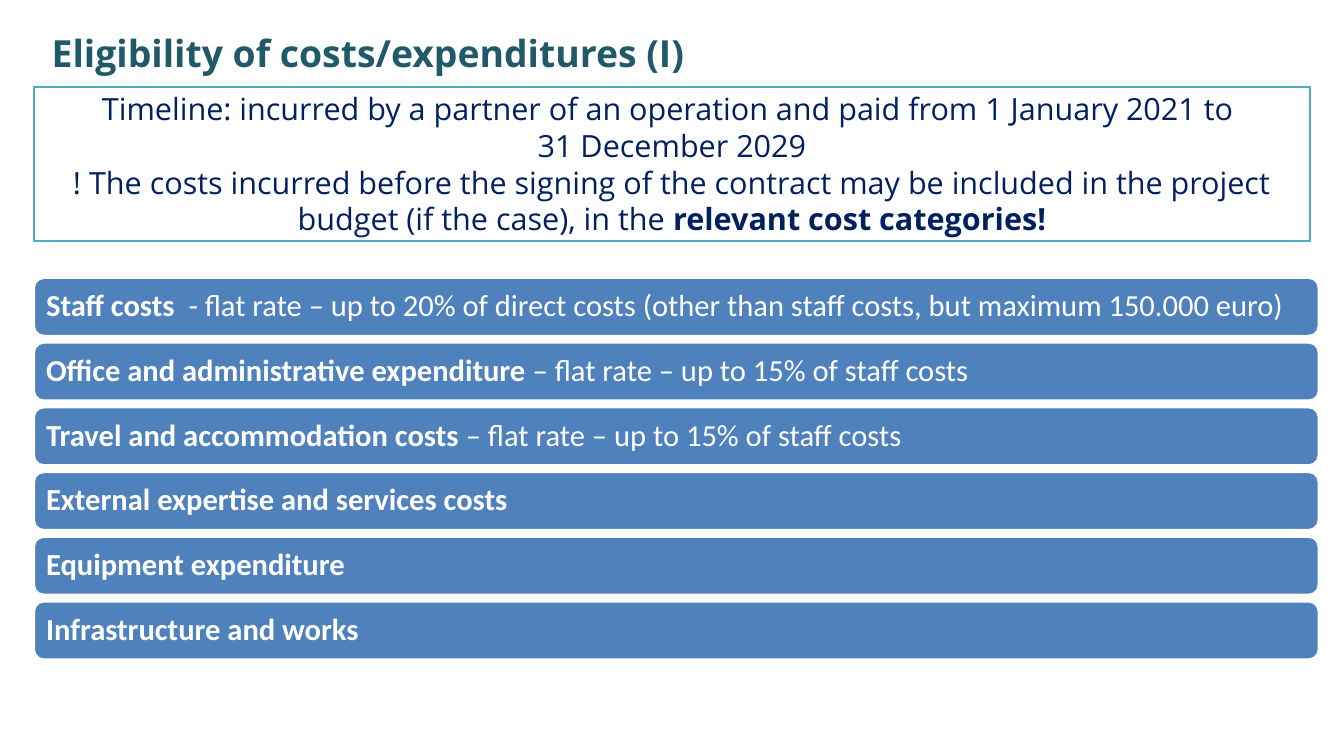
"""Build the slide on the eligibility of costs and expenditures."""
from dataclasses import dataclass
from typing import NamedTuple

from pptx import Presentation
from pptx.dml.color import RGBColor
from pptx.enum.shapes import MSO_SHAPE
from pptx.enum.text import MSO_ANCHOR, MSO_AUTO_SIZE, PP_ALIGN
from pptx.shapes.autoshape import Shape
from pptx.slide import Slide
from pptx.util import Cm, Pt

LEFT = 1.42
BAR_TOP, BAR_STEP, BAR_WIDTH, BAR_HEIGHT = 11.56, 2.69, 53.37, 2.39
TEAL, CYAN, NAVY, BLUE, WHITE = "215968", "4BACC6", "002060", "4F81BD", "FFFFFF"


class Span(NamedTuple):
    text: str
    bold: bool = False
    size: float = 36


@dataclass
class Style:
    font: str
    color: str
    frame: dict
    para: dict


@dataclass
class CostCategory:
    name: str
    rule: str = ""


TITLE_STYLE = Style(
    "Open Sans", TEAL,
    {"word_wrap": True, "auto_size": MSO_AUTO_SIZE.SHAPE_TO_FIT_TEXT},
    {"alignment": PP_ALIGN.LEFT},
)
TIMELINE_STYLE = Style(
    "Open Sans", NAVY,
    {"word_wrap": True, "auto_size": MSO_AUTO_SIZE.SHAPE_TO_FIT_TEXT,
     "vertical_anchor": MSO_ANCHOR.TOP},
    {"alignment": PP_ALIGN.CENTER},
)
BAR_STYLE = Style(
    "Calibri", WHITE,
    {"word_wrap": True, "vertical_anchor": MSO_ANCHOR.MIDDLE,
     "margin_left": Cm(0.38), "margin_right": Cm(0.38),
     "margin_top": Cm(0.38), "margin_bottom": Cm(0.38)},
    {"alignment": PP_ALIGN.LEFT, "line_spacing": 0.9},
)

TITLE = [[Span(" ", True, 52), Span("Eligibility of costs/expenditures (I)", True, 44)]]
TIMELINE = [
    [Span("Timeline: incurred by a partner of an operation and paid from 1 January 2021 to ")],
    [Span("31 December 2029")],
    [Span("! The costs incurred before the signing of the contract may be included "
          "in the project budget (if the case), in the "),
     Span("relevant cost categories!", True)],
]
CATEGORIES = [
    CostCategory("Staff costs  ", "- flat rate – up to 20% of direct costs "
                 "(other than staff costs, but maximum 150.000 euro)"),
    CostCategory("Office and administrative expenditure ",
                 "– flat rate – up to 15% of staff costs"),
    CostCategory("Travel and accommodation costs ",
                 "– flat rate – up to 15% of staff costs"),
    CostCategory("External expertise and services costs"),
    CostCategory("Equipment expenditure"),
    CostCategory("Infrastructure and works"),
]


def rgb(value: str) -> RGBColor:
    """Turn a hex string into a colour."""
    return RGBColor.from_string(value)


def apply(target: object, values: dict) -> None:
    """Set every attribute named in the format values."""
    for name, value in values.items():
        setattr(target, name, value)


def write(box: Shape, paragraphs: list[list[Span]], style: Style) -> None:
    """Fill a box with styled paragraphs."""
    frame = box.text_frame
    apply(frame, style.frame)
    for index, spans in enumerate(paragraphs):
        para = frame.add_paragraph() if index else frame.paragraphs[0]
        apply(para, style.para)
        for span in spans:
            run = para.add_run()
            run.text = span.text
            apply(run.font, {"name": style.font, "size": Pt(span.size), "bold": span.bold})
            run.font.color.rgb = rgb(style.color)


def add_panel(slide: Slide, kind: MSO_SHAPE, top: float, width: float, height: float,
              line: str, fill: str | None = None) -> Shape:
    """Add an outlined shape at the left margin."""
    panel = slide.shapes.add_shape(kind, Cm(LEFT), Cm(top), Cm(width), Cm(height))
    panel.shadow.inherit = False
    panel.line.color.rgb = rgb(line)
    panel.line.width = Pt(2)
    if fill:
        panel.fill.solid()
        panel.fill.fore_color.rgb = rgb(fill)
    else:
        panel.fill.background()
    return panel


def main() -> None:
    """Draw the title, the timeline and the cost categories."""
    deck = Presentation()
    deck.slide_width, deck.slide_height = Cm(55.85), Cm(31.42)
    page = deck.slides.add_slide(deck.slide_layouts[6])

    title = page.shapes.add_textbox(Cm(LEFT), Cm(0.86), Cm(37.26), Cm(2.49))
    write(title, TITLE, TITLE_STYLE)

    timeline = add_panel(page, MSO_SHAPE.RECTANGLE, 3.63, 53.01, 6.4, CYAN)
    write(timeline, TIMELINE, TIMELINE_STYLE)

    for index, category in enumerate(CATEGORIES):
        bar = add_panel(page, MSO_SHAPE.ROUNDED_RECTANGLE, BAR_TOP + index * BAR_STEP,
                        BAR_WIDTH, BAR_HEIGHT, WHITE, BLUE)
        spans = [Span(category.name, True)]
        if category.rule:
            spans.append(Span(category.rule))
        write(bar, [spans], BAR_STYLE)

    deck.save("out.pptx")


if __name__ == "__main__":
    main()
